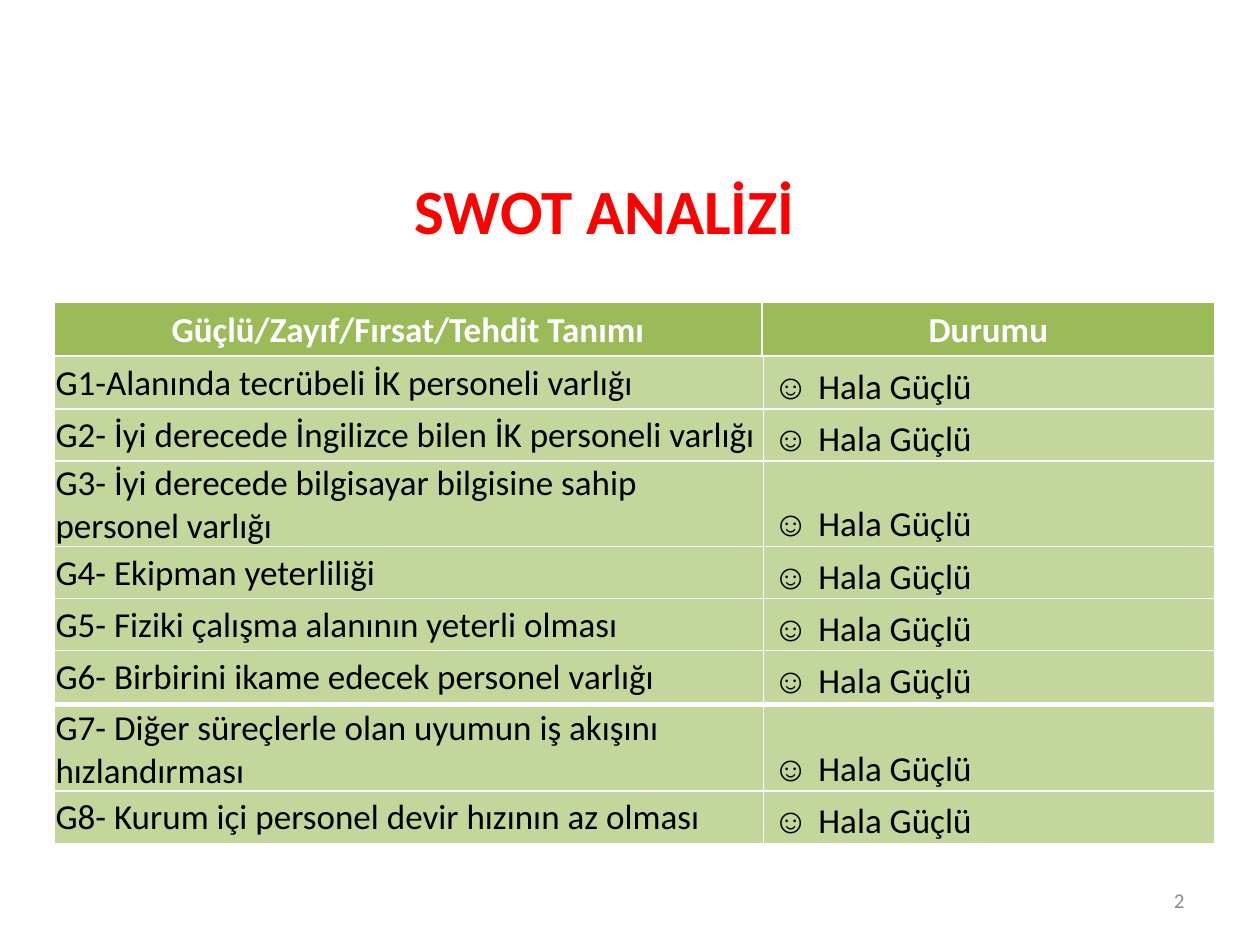
from lxml import etree
from pptx import Presentation
from pptx.dml.color import RGBColor
from pptx.enum import text
from pptx.oxml import ns
from pptx.util import Cm, Pt

COLORS = {"title": "FF0000", "header": "9BBB59", "row": "C3D69B",
          "light": "FFFFFF", "dark": "000000", "number": "8C8C8C"}
ALIGN = text.PP_ALIGN
ANCHOR = text.MSO_ANCHOR


def write(frame, runs, align, color, size, bold=False):
    paragraph = frame.paragraphs[0]
    paragraph.alignment = align
    for words, typeface in runs:
        run = paragraph.add_run()
        run.text = words
        for key, value in {"name": typeface, "size": Pt(size), "bold": bold}.items():
            setattr(run.font, key, value)
        run.font.color.rgb = RGBColor.from_string(COLORS[color])


def paint(cell, color, bottom):
    cell.fill.solid()
    cell.fill.fore_color.rgb = RGBColor.from_string(COLORS[color])
    properties = cell._tc.get_or_add_tcPr()
    for place, (side, width) in enumerate({"L": 1, "R": 1, "T": 1, "B": bottom}.items()):
        border = etree.Element(ns.qn(f"a:ln{side}"), w=str(Pt(width)))
        fill = etree.SubElement(border, ns.qn("a:solidFill"))
        etree.SubElement(fill, ns.qn("a:srgbClr"), val=COLORS["light"])
        properties.insert(place, border)


deck = Presentation()
deck.slide_width, deck.slide_height = Cm(25.4), Cm(19.05)
slide = deck.slides.add_slide(deck.slide_layouts[6])

labels = [
    ("SWOT ANALİZİ", (2.49, 3.33, 19.4, 1.8), ANCHOR.TOP, (ALIGN.CENTER, "title", 36, True)),
    ("2", (18.2, 17.65, 5.93, 1.01), ANCHOR.MIDDLE, (ALIGN.RIGHT, "number", 12)),
]
for words, box, anchor, style in labels:
    frame = slide.shapes.add_textbox(*map(Cm, box)).text_frame
    for key, value in {"word_wrap": True, "vertical_anchor": anchor}.items():
        setattr(frame, key, value)
    write(frame, [(words, "Calibri")], *style)

SINGLE, DOUBLE = 1.05, 1.71
header = ("Güçlü/Zayıf/Fırsat/Tehdit Tanımı", SINGLE)
strengths = [
    ("G1-Alanında tecrübeli İK personeli varlığı", SINGLE),
    ("G2- İyi derecede İngilizce bilen İK personeli varlığı", SINGLE),
    ("G3- İyi derecede bilgisayar bilgisine sahip personel varlığı", DOUBLE),
    ("G4- Ekipman yeterliliği", SINGLE),
    ("G5- Fiziki çalışma alanının yeterli olması", SINGLE),
    ("G6- Birbirini ikame edecek personel varlığı", SINGLE),
    ("G7- Diğer süreçlerle olan uyumun iş akışını hızlandırması", DOUBLE),
    ("G8- Kurum içi personel devir hızının az olması", SINGLE),
]
sections = [
    (6.1, 14.27, [header]),
    (7.19, 14.3, strengths[:6]),
    (14.23, 14.3, strengths[6:7]),
    (15.95, 14.3, strengths[7:]),
]
description_format = {"margin_left": Cm(0.03), "margin_right": Cm(0.03), "margin_top": Cm(0.03),
                      "margin_bottom": 0, "vertical_anchor": ANCHOR.MIDDLE}
status_format = {**description_format, "margin_left": Cm(0.19), "vertical_anchor": ANCHOR.BOTTOM}
TABLE_WIDTH = 23.4

for top, description_width, rows in sections:
    height = sum(row_height for _, row_height in rows)
    table = slide.shapes.add_table(len(rows), 2, Cm(1.09), Cm(top), Cm(TABLE_WIDTH), Cm(height)).table
    for key in ("first_row", "horz_banding"):
        setattr(table, key, False)
    for column, width in zip(table.columns, (description_width, TABLE_WIDTH - description_width)):
        column.width = Cm(width)
    for index, (words, row_height) in enumerate(rows):
        table.rows[index].height = Cm(row_height)
        description, status = table.rows[index].cells
        if rows == [header]:
            for cell, heading in ((description, words), (status, "Durumu")):
                paint(cell, "header", 3)
                write(cell.text_frame, [(heading, "Calibri")], ALIGN.CENTER, "light", 20, True)
            continue
        contents = [
            (description, description_format, [(words, "Calibri")]),
            (status, status_format, [("☺ ", "Arial"), ("Hala Güçlü", "Calibri")]),
        ]
        for cell, cell_format, runs in contents:
            paint(cell, "row", 1)
            for key, value in cell_format.items():
                setattr(cell, key, value)
            write(cell.text_frame, runs, ALIGN.LEFT, "dark", 20)

deck.save("out.pptx")
